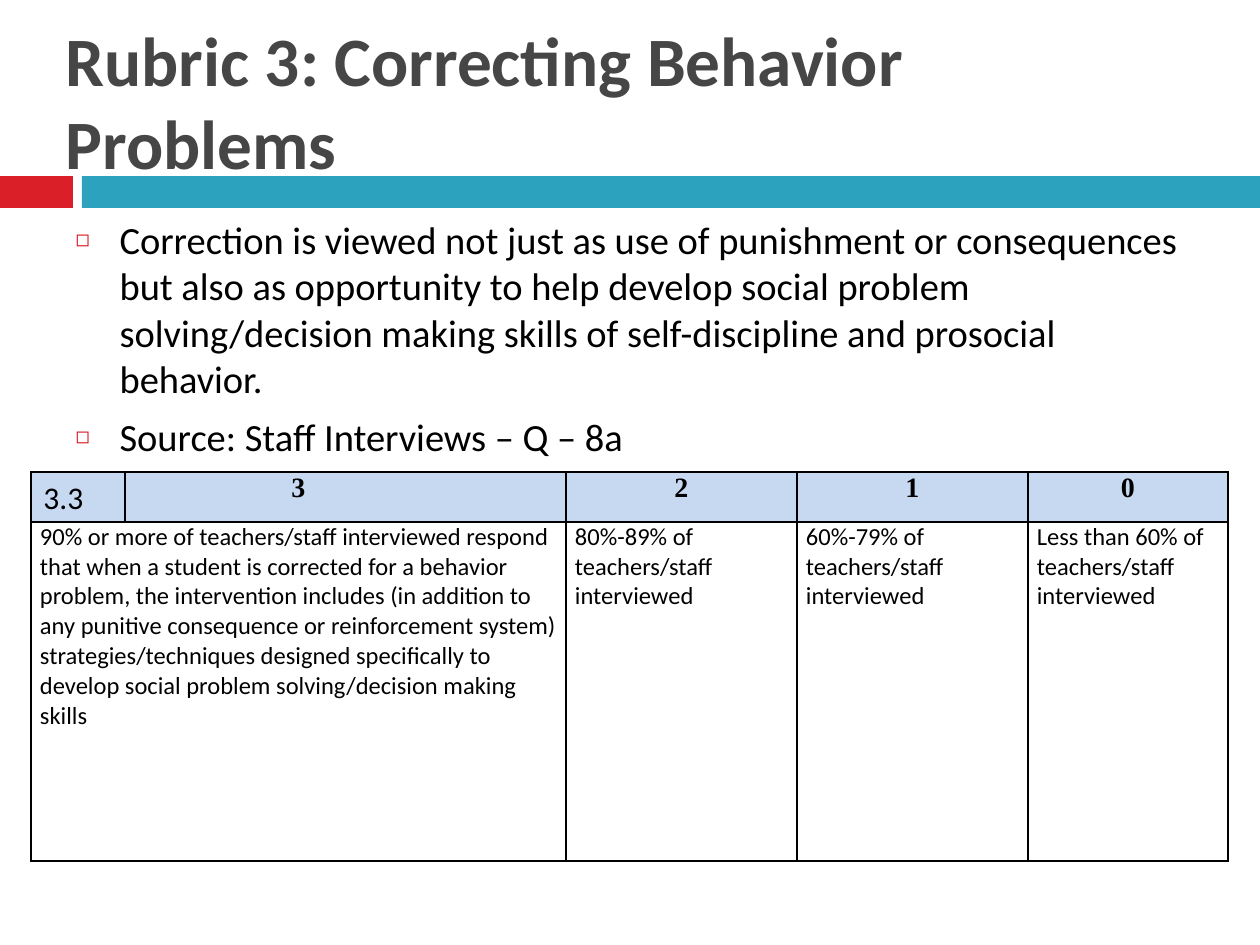
from pptx import Presentation
from pptx.dml.color import RGBColor
from pptx.enum.shapes import MSO_SHAPE
from pptx.enum.text import MSO_ANCHOR, MSO_AUTO_SIZE, PP_ALIGN
from pptx.oxml import parse_xml
from pptx.oxml.ns import nsdecls
from pptx.util import Emu, Pt

RECTANGLE = MSO_SHAPE.RECTANGLE
TOP, MIDDLE = MSO_ANCHOR.TOP, MSO_ANCHOR.MIDDLE
LEFT, CENTER = PP_ALIGN.LEFT, PP_ALIGN.CENTER
NO_FIT, GROW = MSO_AUTO_SIZE.NONE, MSO_AUTO_SIZE.SHAPE_TO_FIT_TEXT

COLORS = {
    "red": "DA1F28",
    "teal": "2DA2BF",
    "title": "464646",
    "text": "000000",
    "header": "C6D9F1",
}
FORMATS = {
    "title": {"name": "Calibri", "size": Pt(39.6), "bold": True},
    "body": {"name": "Calibri", "size": Pt(22), "bold": False},
    "score": {"name": "Times New Roman", "size": Pt(16), "bold": True},
    "criterion": {"name": "Calibri", "size": Pt(14), "bold": False},
    "item": {"name": "Calibri", "size": Pt(18), "bold": False},
}
POINTS = [
    "Correction is viewed not just as use of punishment or consequences but also as "
    "opportunity to help develop social problem solving/decision making skills of "
    "self-discipline and prosocial behavior.",
    "Source: Staff Interviews – Q – 8a",
]
RUBRIC = [
    ("3", 535, "90% or more of teachers/staff interviewed respond that when a student is "
     "corrected for a behavior problem, the intervention includes (in addition to any "
     "punitive consequence or reinforcement system) strategies/techniques designed "
     "specifically to develop social problem solving/decision making skills"),
    ("2", 231, "80%-89% of teachers/staff interviewed"),
    ("1", 231, "60%-79% of teachers/staff interviewed"),
    ("0", 200, "Less than 60% of teachers/staff interviewed"),
]
SCALE = 914400 / 126


def px(length):
    return Emu(round(length * SCALE))


def color(key):
    return RGBColor.from_string(COLORS[key])


def place(part, box):
    for side, length in zip(("left", "top", "width", "height"), box):
        setattr(part, side, px(length))


def write(paragraph, text, style, ink="text", align=LEFT):
    paragraph.alignment = align
    run = paragraph.add_run()
    run.text = text
    for attribute, value in FORMATS[style].items():
        setattr(run.font, attribute, value)
    run.font.color.rgb = color(ink)


def add_bands(slide, box):
    left, top, width, height = box
    red_width, gap = 73, 9
    teal_left = red_width + gap
    for offset, length, key in ((0, red_width, "red"), (teal_left, width - teal_left, "teal")):
        band = slide.shapes.add_shape(
            RECTANGLE, px(left + offset), px(top), px(length), px(height))
        band.shadow.inherit = False
        band.fill.solid()
        band.fill.fore_color.rgb = color(key)
        band.line.fill.background()


def fill_title(slide, box):
    title = slide.shapes.title
    place(title, box)
    frame = title.text_frame
    frame.auto_size = NO_FIT
    frame.vertical_anchor = MIDDLE
    write(frame.paragraphs[0], "Rubric 3: Correcting Behavior Problems", "title", "title")


def add_bullet(paragraph, indent):
    properties = paragraph._p.get_or_add_pPr()
    properties.set("marL", str(px(indent)))
    properties.set("indent", str(-px(indent)))
    for markup in (
        f'<a:buClr {nsdecls("a")}><a:srgbClr val="{COLORS["red"]}"/></a:buClr>',
        f'<a:buSzPct {nsdecls("a")} val="60000"/>',
        f'<a:buChar {nsdecls("a")} char="◻"/>',
    ):
        properties.append(parse_xml(markup))


def fill_points(slide, box):
    body = slide.placeholders[1]
    place(body, box)
    frame = body.text_frame
    frame.auto_size = NO_FIT
    frame.vertical_anchor = TOP
    for index, point in enumerate(POINTS):
        paragraph = frame.add_paragraph() if index else frame.paragraphs[0]
        paragraph.space_before = Pt(7)
        write(paragraph, point, "body")
        add_bullet(paragraph, 44)


def fill_cell(cell, text, style, align, inset, fill=None):
    margins = {"margin_left": px(inset), "margin_right": px(inset),
               "margin_top": 0, "margin_bottom": 0}
    for attribute, value in margins.items():
        setattr(cell, attribute, value)
    properties = cell._tc.get_or_add_tcPr()
    for side in "LRTB":
        properties.append(parse_xml(
            f'<a:ln{side} {nsdecls("a")} w="{Pt(1)}"><a:solidFill>'
            f'<a:srgbClr val="{COLORS["text"]}"/></a:solidFill></a:ln{side}>'))
    if fill:
        cell.fill.solid()
        cell.fill.fore_color.rgb = color(fill)
    else:
        cell.fill.background()
    write(cell.text_frame.paragraphs[0], text, style, align=align)


def add_rubric(slide, box):
    left, top, width, height = box
    header_height = 50
    table = slide.shapes.add_table(2, len(RUBRIC), *map(px, box)).table
    table.first_row = table.horz_banding = False
    table.rows[0].height = px(header_height)
    table.rows[1].height = px(height - header_height)
    for column, (score, column_width, criterion) in enumerate(RUBRIC):
        table.columns[column].width = px(column_width)
        fill_cell(table.cell(0, column), score, "score", CENTER, 6, "header")
        fill_cell(table.cell(1, column), criterion, "criterion", LEFT, 9)

    item = slide.shapes.add_shape(RECTANGLE, px(left), px(top), px(94), px(header_height))
    item.shadow.inherit = False
    item.fill.background()
    item.line.color.rgb = color("text")
    item.line.width = Pt(0.75)
    frame = item.text_frame
    frame.word_wrap = True
    frame.auto_size = GROW
    frame.vertical_anchor = TOP
    write(frame.paragraphs[0], "3.3", "item")


def main():
    presentation = Presentation()
    presentation.slide_width = px(1260)
    presentation.slide_height = px(945)
    slide = presentation.slides.add_slide(presentation.slide_layouts[1])
    add_bands(slide, (0, 176, 1260, 32))
    fill_title(slide, (53, 21, 1134, 158))
    fill_points(slide, (63, 210, 1134, 231))
    add_rubric(slide, (31, 472, 1197, 389))
    presentation.save("out.pptx")


if __name__ == "__main__":
    main()
